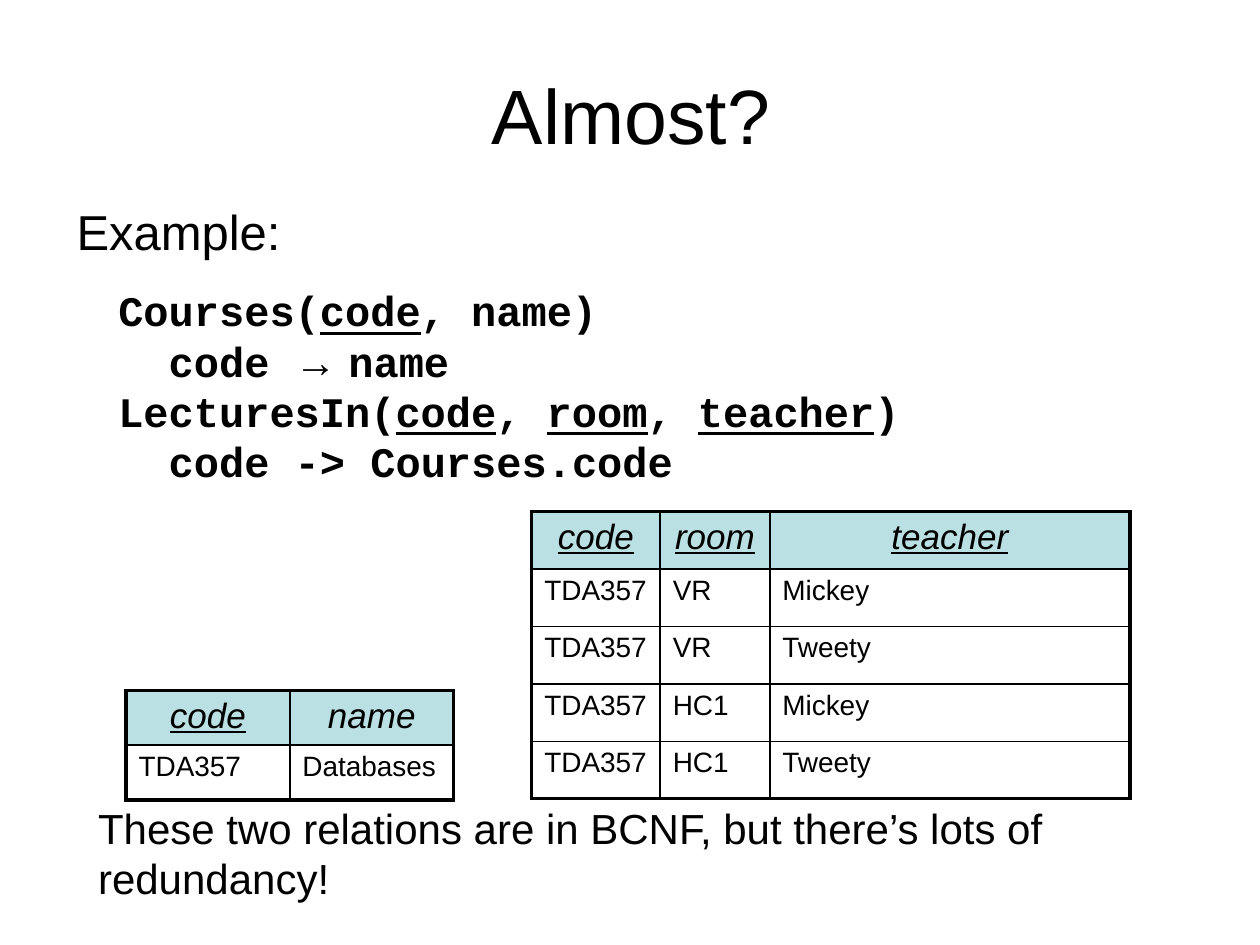
from lxml.etree import SubElement
from pptx import Presentation
from pptx.dml.color import RGBColor
from pptx.enum.text import MSO_ANCHOR, PP_ALIGN
from pptx.oxml.ns import qn
from pptx.util import Inches, Pt

BLACK = "000000"
HEADER_FILL = "BBE0E3"
THICK, THIN = 2.25, 1


def add_text(paragraph, text, size=24, font="Arial", color=BLACK, bold=False,
             italic=False, underline=False):
    run = paragraph.add_run()
    run.text = text
    run.font.size = Pt(size)
    run.font.name = font
    run.font.color.rgb = RGBColor.from_string(color)
    run.font.bold = bold
    run.font.italic = italic
    run.font.underline = underline


def add_box(left, top, width, height):
    shape = slide.shapes.add_textbox(Inches(left), Inches(top), Inches(width), Inches(height))
    shape.text_frame.word_wrap = True
    return shape.text_frame


presentation = Presentation()
presentation.slide_width = Inches(10)
presentation.slide_height = Inches(7.5)
slide = presentation.slides.add_slide(presentation.slide_layouts[6])

title = add_box(0.51, 0.28, 9, 1.25)
title.vertical_anchor = MSO_ANCHOR.MIDDLE
title.paragraphs[0].alignment = PP_ALIGN.CENTER
add_text(title.paragraphs[0], "Almost?", size=44)

example = add_box(0.51, 1.55, 9, 0.66)
example.paragraphs[0].space_before = Pt(3)
add_text(example.paragraphs[0], "Example:", size=28)

code = {"font": "Courier New", "bold": True}
key = {**code, "underline": True}
schema_lines = [
    (0, [("Courses(", code), ("code", key), (", name)", code)]),
    (0.4, [("code ", code), ("→ ", {}), ("name", code)]),
    (0, [("LecturesIn(", code), ("code", key), (", ", code), ("room", key),
         (", ", code), ("teacher", key), (")", code)]),
    (0.4, [("code -> Courses.code", code)]),
]
schema = add_box(0.84, 2.21, 8.51, 2.12)
for index, (indent, parts) in enumerate(schema_lines):
    paragraph = schema.add_paragraph() if index else schema.paragraphs[0]
    paragraph._p.get_or_add_pPr().set("marL", str(Inches(indent)))
    for text, text_format in parts:
        add_text(paragraph, text, **text_format)

lectures = [
    ("code", "room", "teacher"),
    ("TDA357", "VR", "Mickey"),
    ("TDA357", "VR", "Tweety"),
    ("TDA357", "HC1", "Mickey"),
    ("TDA357", "HC1", "Tweety"),
]
courses = [("code", "name"), ("TDA357", "Databases")]
tables = [
    (4.22, 4.06, [1.02, 0.87, 2.86], 2.28, lectures, {"code", "room", "teacher"}),
    (1, 5.48, [1.3, 1.3], 0.87, courses, {"code"}),
]
for left, top, widths, height, rows, keys in tables:
    last_row, last_column = len(rows) - 1, len(widths) - 1
    table = slide.shapes.add_table(len(rows), len(widths), Inches(left), Inches(top),
                                   Inches(sum(widths)), Inches(height)).table
    table.first_row = False
    table.horz_banding = False
    for column, width in zip(table.columns, widths):
        column.width = Inches(width)
    for row_index, row in enumerate(rows):
        for column_index, text in enumerate(row):
            cell = table.cell(row_index, column_index)
            outer_edges = {
                "a:lnL": column_index == 0,
                "a:lnR": column_index == last_column,
                "a:lnT": row_index == 0,
                "a:lnB": row_index == last_row,
            }
            properties = cell._tc.get_or_add_tcPr()
            for edge, is_outer in outer_edges.items():
                line = SubElement(properties, qn(edge), w=str(Pt(THICK if is_outer else THIN)))
                fill = SubElement(line, qn("a:solidFill"))
                SubElement(fill, qn("a:srgbClr"), val=BLACK)
            paragraph = cell.text_frame.paragraphs[0]
            if row_index == 0:
                cell.fill.solid()
                cell.fill.fore_color.rgb = RGBColor.from_string(HEADER_FILL)
                paragraph.alignment = PP_ALIGN.CENTER
                add_text(paragraph, text, size=20, italic=True, underline=text in keys)
            else:
                cell.fill.background()
                add_text(paragraph, text, size=16)

conclusion = add_box(0.68, 6.32, 8.51, 0.9)
conclusion.paragraphs[0].space_before = Pt(2)
add_text(conclusion.paragraphs[0],
         "These two relations are in BCNF, but there’s lots of redundancy!")

presentation.save("out.pptx")
